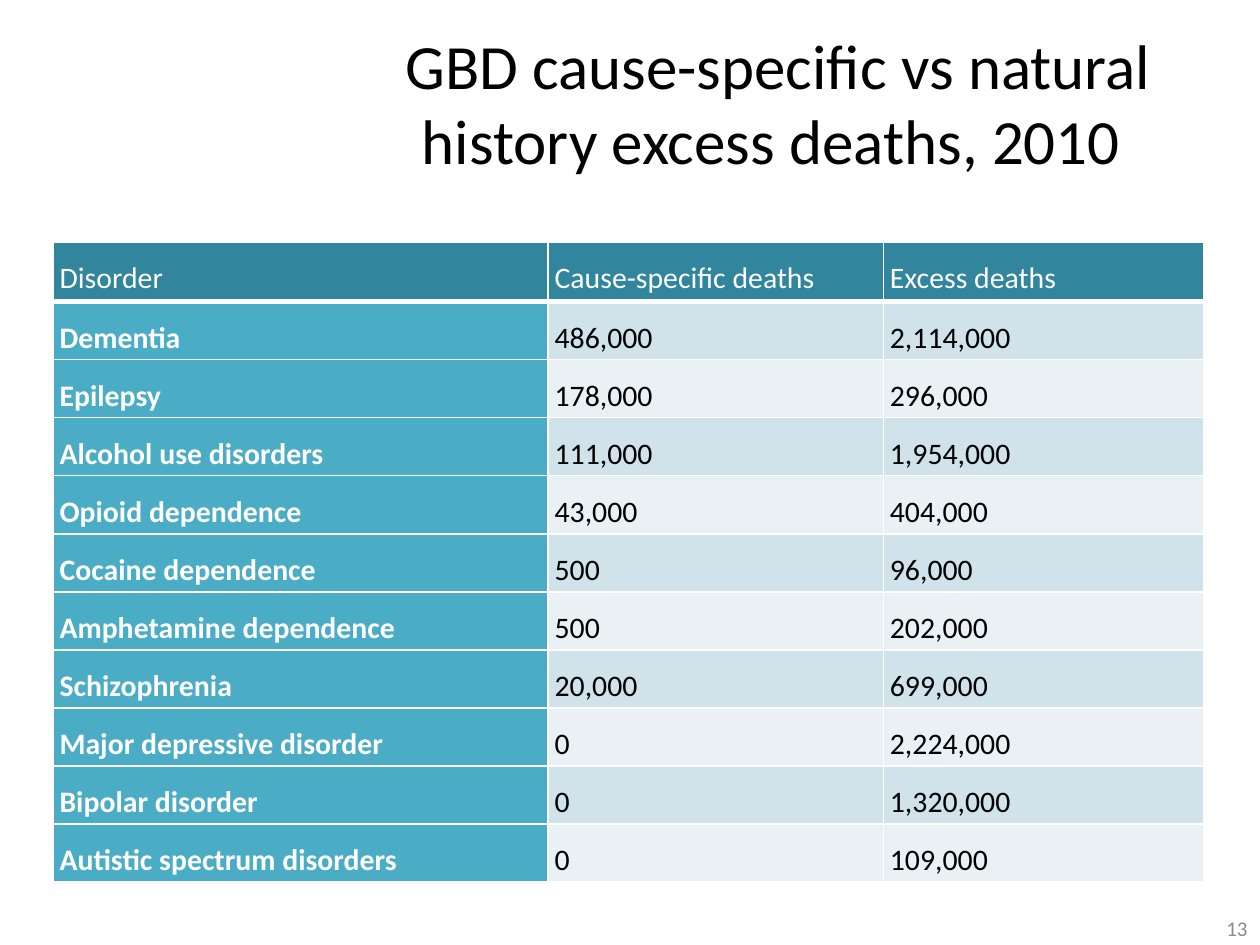
from dataclasses import dataclass
from typing import NamedTuple

from lxml.etree import SubElement
from pptx import Presentation
from pptx.dml.color import RGBColor
from pptx.enum.text import MSO_ANCHOR, PP_ALIGN
from pptx.oxml.ns import qn
from pptx.util import Cm, Pt


@dataclass(frozen=True)
class Theme:
    font: str = "Calibri"
    title_size: int = 36
    table_size: int = 17
    number_size: int = 12
    ink: str = "000000"
    white: str = "FFFFFF"
    grey: str = "8C8C8C"
    header: str = "31859C"
    label: str = "4BACC6"
    bands: tuple[str, str] = ("D0E3EA", "E9F1F5")
    rule: int = 1
    header_rule: int = 3


class Disorder(NamedTuple):
    name: str
    cause_specific: str
    excess: str


@dataclass(frozen=True)
class Caption:
    text: str
    left: float
    top: float
    width: float
    height: float
    size: int
    color: str
    align: PP_ALIGN


THEME = Theme()
HEADINGS = Disorder("Disorder", "Cause-specific deaths ", "Excess deaths")
DISORDERS = [
    Disorder("Dementia", "486,000 ", "2,114,000"),
    Disorder("Epilepsy", "178,000", "296,000"),
    Disorder("Alcohol use disorders", "111,000", "1,954,000"),
    Disorder("Opioid dependence", "43,000", "404,000"),
    Disorder("Cocaine dependence", "500", "96,000"),
    Disorder("Amphetamine dependence", "500", "202,000"),
    Disorder("Schizophrenia", "20,000", "699,000"),
    Disorder("Major depressive disorder", "0", "2,224,000"),
    Disorder("Bipolar disorder", "0", "1,320,000"),
    Disorder("Autistic spectrum disorders", "0", "109,000"),
]
CAPTIONS = [
    Caption("GBD cause-specific vs natural history excess deaths, 2010 ",
            6.35, 1.07, 18.67, 1.96, THEME.title_size, THEME.ink, PP_ALIGN.CENTER),
    Caption("13", 19.48, 18.21, 5.92, 1.02, THEME.number_size, THEME.grey, PP_ALIGN.RIGHT),
]
COLUMN_WIDTHS = (9.98, 6.76, 6.45)
HEADER_HEIGHT, ROW_HEIGHT = 1.2, 1.17


def apply_format(target, values: dict) -> None:
    for attribute, value in values.items():
        setattr(target, attribute, value)


def write(paragraph, text: str, size: int, color: str, align: PP_ALIGN, bold: bool = False) -> None:
    paragraph.alignment = align
    run = paragraph.add_run()
    run.text = text
    apply_format(run.font, {"name": THEME.font, "size": Pt(size), "bold": bold})
    run.font.color.rgb = RGBColor.from_string(color)


def draw_caption(slide, caption: Caption) -> None:
    area = map(Cm, (caption.left, caption.top, caption.width, caption.height))
    frame = slide.shapes.add_textbox(*area).text_frame
    apply_format(frame, {"word_wrap": True, "vertical_anchor": MSO_ANCHOR.MIDDLE})
    write(frame.paragraphs[0], caption.text, caption.size, caption.color, caption.align)


def draw_borders(cell, bottom_width: int) -> None:
    """Rule all four sides; call before filling, as the schema puts lines first."""
    properties = cell._tc.get_or_add_tcPr()
    widths = {"lnL": THEME.rule, "lnR": THEME.rule, "lnT": THEME.rule, "lnB": bottom_width}
    for side, width in widths.items():
        line = SubElement(properties, qn(f"a:{side}"), w=str(Pt(width)))
        SubElement(SubElement(line, qn("a:solidFill")), qn("a:srgbClr"), val=THEME.white)


def draw_cell(cell, text: str, row: int, column: int) -> None:
    is_header, is_label = row == 0, row > 0 and column == 0
    if is_header:
        fill = THEME.header
    else:
        fill = THEME.label if is_label else THEME.bands[(row - 1) % 2]
    draw_borders(cell, THEME.header_rule if is_header else THEME.rule)
    cell.fill.solid()
    cell.fill.fore_color.rgb = RGBColor.from_string(fill)
    apply_format(cell, {"margin_left": Cm(0.13), "margin_right": Cm(0.13),
                        "margin_top": Cm(0), "margin_bottom": Cm(0)})
    paragraph = cell.text_frame.paragraphs[0]
    paragraph.line_spacing = 1.5
    write(paragraph, text, THEME.table_size,
          THEME.white if is_header or is_label else THEME.ink,
          PP_ALIGN.LEFT if is_label else PP_ALIGN.JUSTIFY, bold=is_label)


def draw_deaths_table(slide) -> None:
    records = [HEADINGS, *DISORDERS]
    heights = [HEADER_HEIGHT] + [ROW_HEIGHT] * len(DISORDERS)
    table = slide.shapes.add_table(
        len(records), len(COLUMN_WIDTHS), Cm(1.07), Cm(4.88),
        Cm(sum(COLUMN_WIDTHS)), Cm(sum(heights))).table
    apply_format(table, {"first_row": True, "first_col": True, "horz_banding": True})
    for column, width in zip(table.columns, COLUMN_WIDTHS):
        column.width = Cm(width)
    for row, (record, height) in enumerate(zip(records, heights)):
        table.rows[row].height = Cm(height)
        for column, text in enumerate(record):
            draw_cell(table.cell(row, column), text, row, column)


def main() -> None:
    deck = Presentation()
    apply_format(deck, {"slide_width": Cm(25.4), "slide_height": Cm(19.05)})
    slide = deck.slides.add_slide(deck.slide_layouts[6])
    for caption in CAPTIONS:
        draw_caption(slide, caption)
    draw_deaths_table(slide)
    deck.save("out.pptx")


if __name__ == "__main__":
    main()
